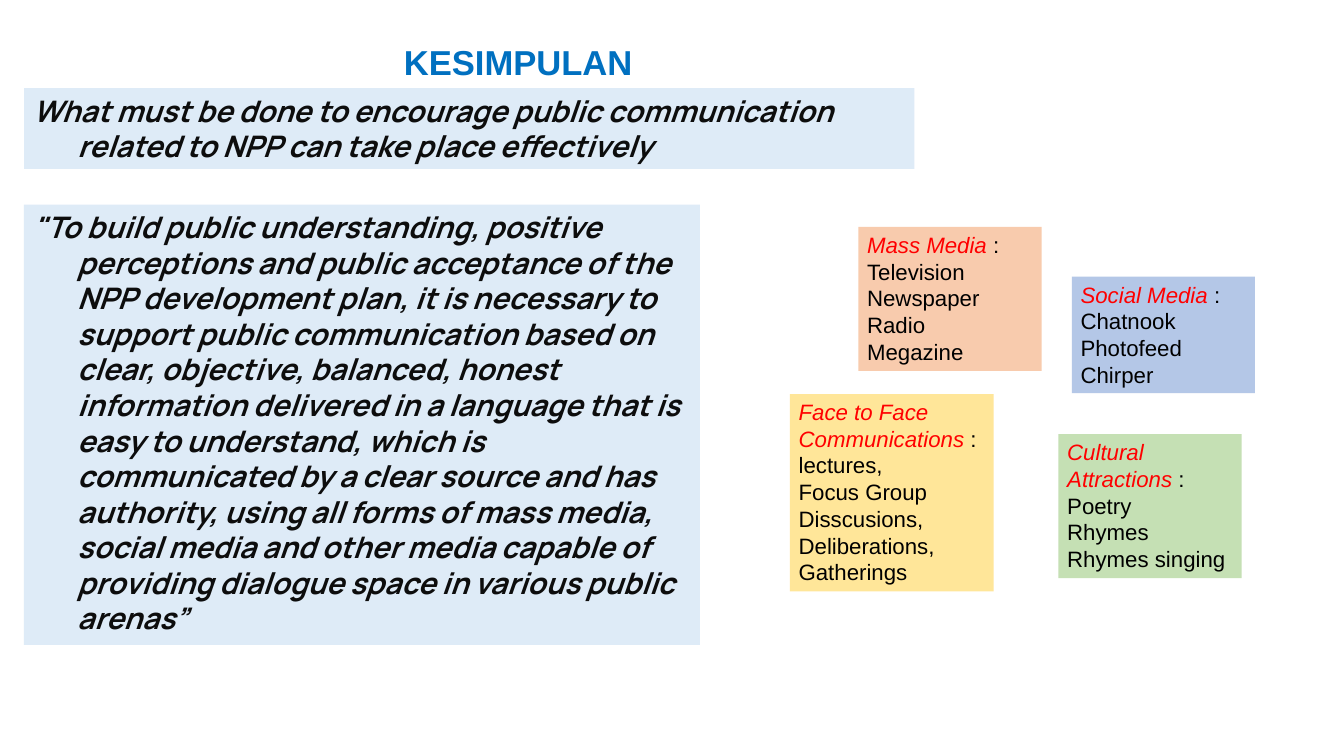
from dataclasses import dataclass

from pptx import Presentation
from pptx.dml.color import RGBColor as Rgb
from pptx.enum.shapes import MSO_SHAPE as Kind
from pptx.enum.text import MSO_ANCHOR as Anchor, MSO_AUTO_SIZE as Fit, PP_ALIGN as Align
from pptx.shapes.base import BaseShape
from pptx.slide import Slide
from pptx.text.text import TextFrame, _Paragraph as Para
from pptx.util import Pt

PX = 9144  # EMU per px, 100 px to the inch


@dataclass(frozen=True)
class Theme:
    head: str = "0070C0"
    ink: str = "0D0D0D"
    text: str = "000000"
    label: str = "FF0000"
    panel: str = "DEEBF7"
    peach: str = "F8CBAD"
    blue: str = "B4C7E7"
    gold: str = "FFE699"
    green: str = "C5E0B4"
    sans: str = "Arial"
    quote: str = "Manrope"
    big: int = 28
    mid: int = 24
    small: int = 18


THEME = Theme()


@dataclass(frozen=True)
class Box:
    left: int
    top: int
    width: int
    height: int

    def emu(self) -> tuple[int, int, int, int]:
        return self.left * PX, self.top * PX, self.width * PX, self.height * PX


@dataclass(frozen=True)
class Font:
    name: str
    size: int
    color: str
    bold: bool = False
    italic: bool = False


@dataclass(frozen=True)
class Panel:
    box: Box
    text: str


@dataclass(frozen=True)
class Card:
    box: Box
    fill: str
    label: str
    items: tuple[str, ...]


TITLE = Font(THEME.sans, THEME.big, THEME.head, bold=True)
QUOTE = Font(THEME.quote, THEME.mid, THEME.ink, bold=True, italic=True)
LABEL = Font(THEME.sans, THEME.small, THEME.label, italic=True)
BODY = Font(THEME.sans, THEME.small, THEME.text)

PANELS = (
    Panel(Box(27, 99, 1001, 91),
          "What must be done to encourage public communication related to NPP "
          "can take place effectively"),
    Panel(Box(27, 230, 760, 495),
          '"To build public understanding, positive perceptions and public '
          "acceptance of the NPP development plan, it is necessary to support "
          "public communication based on clear, objective, balanced, honest "
          "information delivered in a language that is easy to understand, "
          "which is communicated by a clear source and has authority, using "
          "all forms of mass media, social media and other media capable of "
          "providing dialogue space in various public arenas”"),
)

CARDS = (
    Card(Box(965, 255, 206, 162), THEME.peach, "Mass Media",
         ("Television", "Newspaper", "Radio", "Megazine")),
    Card(Box(1205, 311, 206, 131), THEME.blue, "Social Media",
         ("Chatnook", "Photofeed", "Chirper")),
    Card(Box(888, 443, 229, 222), THEME.gold, "Face to Face Communications",
         ("lectures,", "Focus Group Disscusions, Deliberations, Gatherings")),
    Card(Box(1190, 488, 206, 162), THEME.green, "Cultural Attractions",
         ("Poetry", "Rhymes", "Rhymes singing")),
)


def add_run(para: Para, text: str, font: Font) -> None:
    run = para.add_run()
    run.text = text
    run.font.name = font.name
    run.font.size = Pt(font.size)
    run.font.bold = font.bold
    run.font.italic = font.italic
    run.font.color.rgb = Rgb.from_string(font.color)


def set_frame(shape: BaseShape) -> TextFrame:
    frame = shape.text_frame
    frame.word_wrap = True
    frame.auto_size = Fit.SHAPE_TO_FIT_TEXT
    frame.vertical_anchor = Anchor.TOP
    return frame


def add_rect(slide: Slide, box: Box, fill: str) -> TextFrame:
    rect = slide.shapes.add_shape(Kind.RECTANGLE, *box.emu())
    rect.shadow.inherit = False
    rect.fill.solid()
    rect.fill.fore_color.rgb = Rgb.from_string(fill)
    rect.line.fill.background()
    return set_frame(rect)


def add_title(slide: Slide, box: Box, text: str) -> None:
    para = set_frame(slide.shapes.add_textbox(*box.emu())).paragraphs[0]
    para.alignment = Align.CENTER
    add_run(para, text, TITLE)


def add_panel(slide: Slide, panel: Panel) -> None:
    para = add_rect(slide, panel.box, THEME.panel).paragraphs[0]
    para.alignment = Align.LEFT
    # Hanging indent
    props = para._p.get_or_add_pPr()
    props.set("marL", str(50 * PX))
    props.set("indent", str(-50 * PX))
    add_run(para, panel.text, QUOTE)


def add_card(slide: Slide, card: Card) -> None:
    frame = add_rect(slide, card.box, card.fill)
    para = frame.paragraphs[0]
    para.alignment = Align.LEFT
    add_run(para, card.label + " ", LABEL)
    add_run(para, ":", BODY)
    for item in card.items:
        para = frame.add_paragraph()
        para.alignment = Align.LEFT
        add_run(para, item, BODY)


def main() -> None:
    deck = Presentation()
    deck.slide_width, deck.slide_height = 1511 * PX, 850 * PX
    slide = deck.slides.add_slide(deck.slide_layouts[6])

    # Heading
    add_title(slide, Box(38, 41, 1089, 108), "KESIMPULAN")

    # Question and answer
    for panel in PANELS:
        add_panel(slide, panel)

    # Media channels
    for card in CARDS:
        add_card(slide, card)

    deck.save("out.pptx")


if __name__ == "__main__":
    main()
